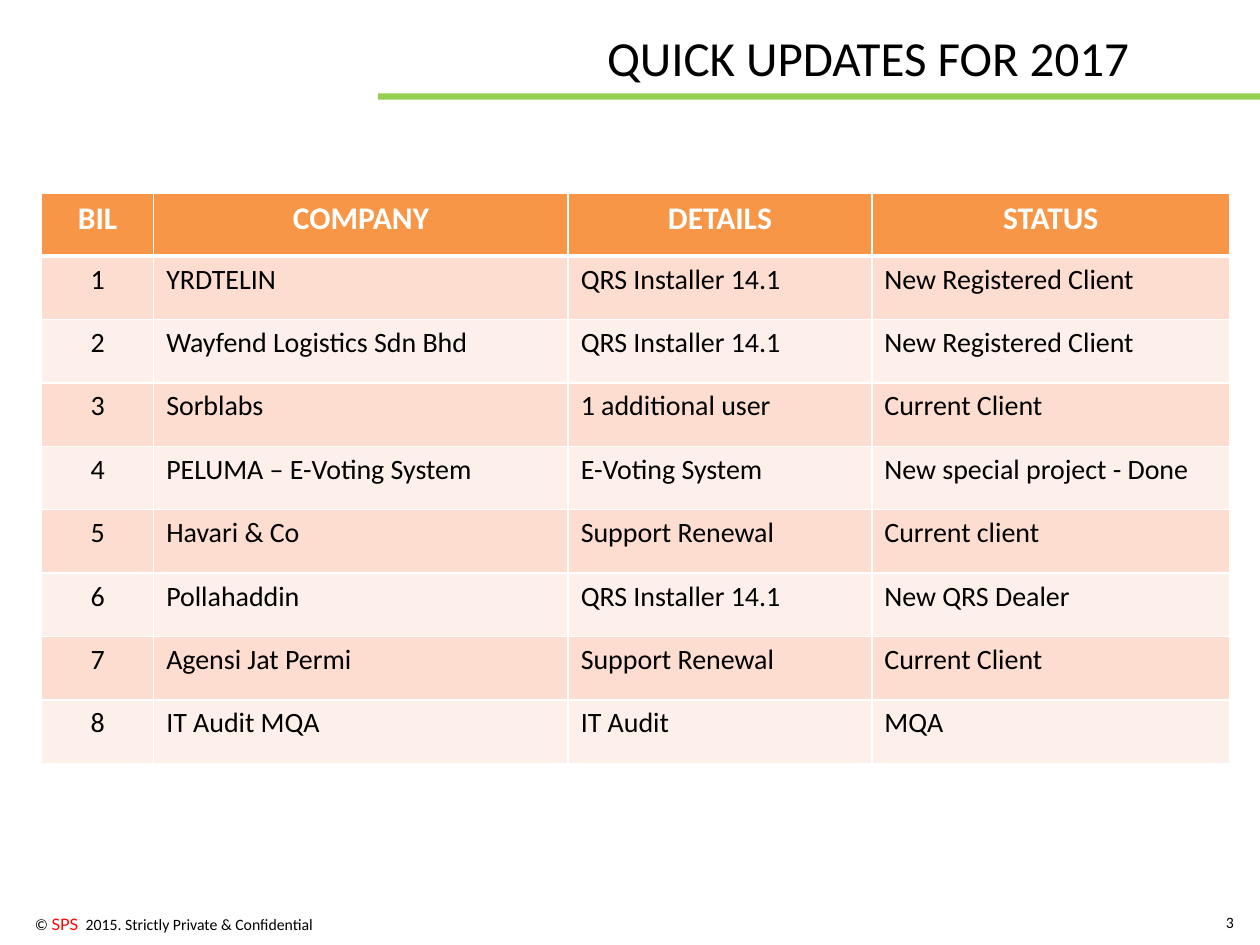
"""Build the slide of quick updates for 2017: heading, client table and footer."""

from dataclasses import dataclass

from lxml.etree import SubElement
from pptx import Presentation
from pptx.dml.color import RGBColor
from pptx.enum.shapes import MSO_SHAPE
from pptx.enum.text import MSO_ANCHOR, PP_ALIGN
from pptx.oxml.ns import qn
from pptx.util import Emu, Inches, Pt

GRID_COLUMNS, GRID_ROWS = 100, 75
SLIDE_WIDTH, SLIDE_HEIGHT = Inches(10), Inches(7.5)
COLORS = {
    "ink": "000000",
    "paper": "FFFFFF",
    "rule": "92D050",
    "brand": "FF0000",
    "header": "F79646",
    "odd": "FCDDCF",
    "even": "FDEFE9",
}
COLUMN_SPANS = (8.9, 32.9, 24.1, 28.4)
TABLE_SPAN = 45.3
HEADINGS = ("BIL", "COMPANY", "DETAILS", "STATUS")


@dataclass(frozen=True)
class Update:
    company: str
    details: str
    status: str


@dataclass(frozen=True)
class Area:
    column: float
    row: float
    columns: float
    rows: float

    def box(self) -> tuple[Emu, Emu, Emu, Emu]:
        return across(self.column), down(self.row), across(self.columns), down(self.rows)


UPDATES = (
    Update("YRDTELIN", "QRS Installer 14.1", "New Registered Client"),
    Update("Wayfend Logistics Sdn Bhd", "QRS Installer 14.1", "New Registered Client"),
    Update("Sorblabs", "1 additional user", "Current Client"),
    Update("PELUMA – E-Voting System", "E-Voting System", "New special project - Done"),
    Update("Havari & Co", "Support Renewal", "Current client"),
    Update("Pollahaddin", "QRS Installer 14.1", "New QRS Dealer"),
    Update("Agensi Jat Permi", "Support Renewal", "Current Client"),
    Update("IT Audit MQA", "IT Audit", "MQA"),
)


def across(columns: float) -> Emu:
    return Emu(round(SLIDE_WIDTH * columns / GRID_COLUMNS))


def down(rows: float) -> Emu:
    return Emu(round(SLIDE_HEIGHT * rows / GRID_ROWS))


def color(name: str) -> RGBColor:
    return RGBColor.from_string(COLORS[name])


def write(paragraph, text: str, *, size: float = 9, ink: str = "ink", bold: bool = False,
          font: str = "Calibri", align=PP_ALIGN.LEFT) -> None:
    paragraph.alignment = align
    run = paragraph.add_run()
    run.text = text
    run.font.size = Pt(size)
    run.font.name = font
    run.font.bold = bold
    run.font.color.rgb = color(ink)


def add_text_area(slide, area: Area, wrap: bool = True, anchor=MSO_ANCHOR.TOP):
    frame = slide.shapes.add_textbox(*area.box()).text_frame
    frame.word_wrap = wrap
    frame.vertical_anchor = anchor
    return frame.paragraphs[0]


def add_rule(slide, area: Area) -> None:
    rule = slide.shapes.add_shape(MSO_SHAPE.RECTANGLE, *area.box())
    rule.shadow.inherit = False
    rule.fill.solid()
    rule.fill.fore_color.rgb = color("rule")
    rule.line.fill.background()


def set_borders(cell, top: float, bottom: float) -> None:
    properties = cell._tc.get_or_add_tcPr()
    for side, points in (("L", 1), ("R", 1), ("T", top), ("B", bottom)):
        border = SubElement(properties, qn(f"a:ln{side}"), w=str(Pt(points)))
        fill = SubElement(border, qn("a:solidFill"))
        SubElement(fill, qn("a:srgbClr"), val=COLORS["paper"])


def add_updates_table(slide) -> None:
    lines = [HEADINGS] + [
        (str(number), update.company, update.details, update.status)
        for number, update in enumerate(UPDATES, 1)
    ]
    area = Area(3.3, 15.3, sum(COLUMN_SPANS), TABLE_SPAN)
    table = slide.shapes.add_table(len(lines), len(HEADINGS), *area.box()).table
    for column, span in zip(table.columns, COLUMN_SPANS):
        column.width = across(span)
    for index, line in enumerate(lines):
        table.rows[index].height = down(TABLE_SPAN / len(lines))
        is_header = index == 0
        band = "header" if is_header else "odd" if index % 2 else "even"
        for position, text in enumerate(line):
            cell = table.cell(index, position)
            set_borders(cell, top=3 if index == 1 else 1, bottom=3 if is_header else 1)
            cell.fill.solid()
            cell.fill.fore_color.rgb = color(band)
            centred = is_header or position == 0
            write(cell.text_frame.paragraphs[0], text,
                  size=18 if is_header else 16,
                  ink="paper" if is_header else "ink",
                  bold=is_header,
                  align=PP_ALIGN.CENTER if centred else PP_ALIGN.LEFT)


def add_footer(slide) -> None:
    notice = add_text_area(slide, Area(1, 72.1, 24.8, 2.5))
    write(notice, "© ", align=PP_ALIGN.RIGHT)
    write(notice, "SPS ", ink="brand", font="Lato", align=PP_ALIGN.RIGHT)
    write(notice, " 2015. Strictly Private & Confidential", align=PP_ALIGN.RIGHT)
    page = add_text_area(slide, Area(94.9, 71.2, 4, 4), anchor=MSO_ANCHOR.MIDDLE)
    write(page, "3", align=PP_ALIGN.RIGHT)


def main() -> None:
    deck = Presentation()
    deck.slide_width, deck.slide_height = SLIDE_WIDTH, SLIDE_HEIGHT
    slide = deck.slides.add_slide(deck.slide_layouts[6])
    add_rule(slide, Area(30, 7.4, 70, 0.5))
    add_footer(slide)
    heading = add_text_area(slide, Area(47.2, 1.7, 44, 5.7), wrap=False)
    write(heading, "QUICK UPDATES FOR 2017", size=28)
    add_updates_table(slide)
    deck.save("out.pptx")


if __name__ == "__main__":
    main()
